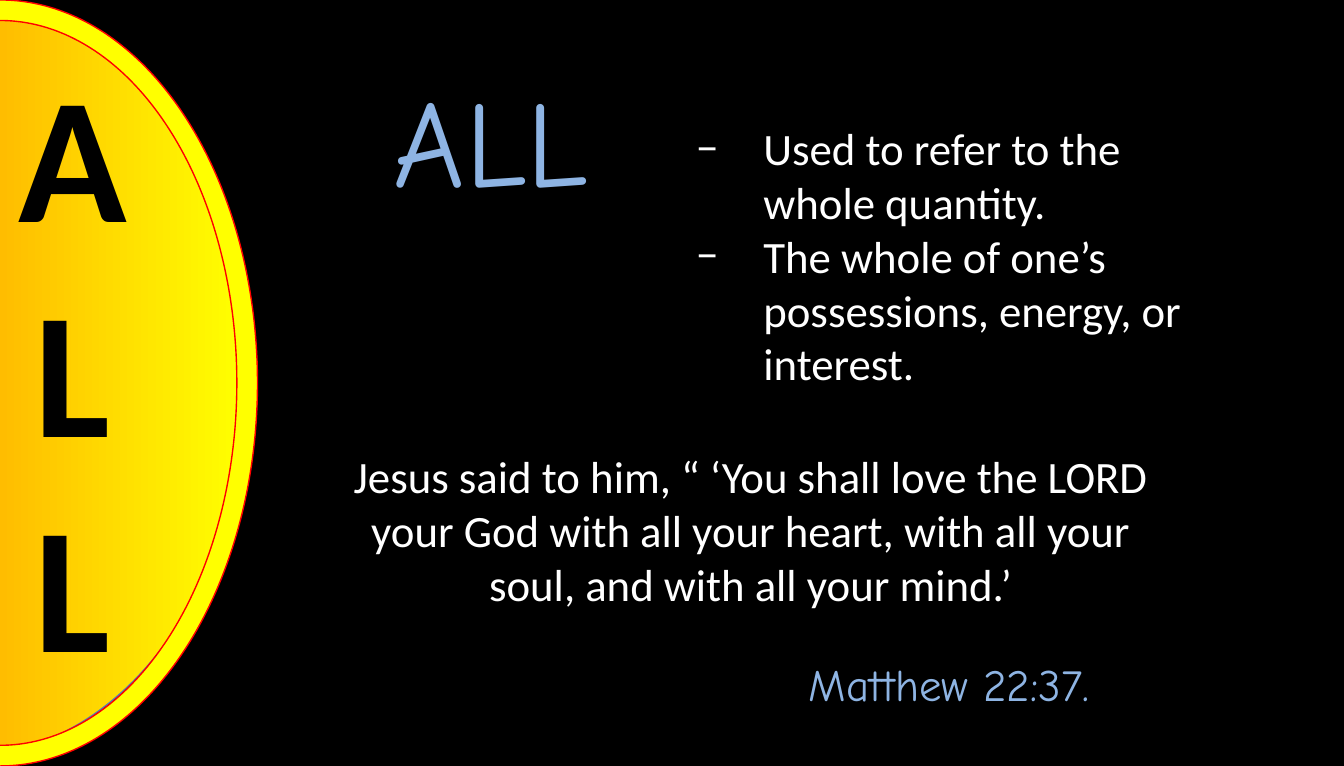
from lxml import etree
from pptx import Presentation
from pptx.dml.color import RGBColor
from pptx.enum.shapes import MSO_SHAPE
from pptx.enum.text import MSO_ANCHOR, MSO_AUTO_SIZE, PP_ALIGN
from pptx.oxml.ns import qn
from pptx.util import Inches, Pt

LEFT, MID = PP_ALIGN.LEFT, PP_ALIGN.CENTER
TOP, FIXED = MSO_ANCHOR.TOP, MSO_AUTO_SIZE.NONE
CHORD, ARC = MSO_SHAPE.CHORD, MSO_SHAPE.BLOCK_ARC

WIDE, HIGH = Inches(10), Inches(5.7)
BLACK, WHITE, BLUE = "000000", "FFFFFF", "8EB4E3"
YELLOW, ORANGE, RED, EDGE = "FFFF00", "FF6600", "FF0000", "4B7EBC"
PLAIN, HAND = "Calibri", "Comic Neue"

WORD = "ALL"
SENSES = [
    "Used to refer to the whole quantity.",
    "The whole of one’s possessions, energy, or interest.",
]
VERSE = (
    "Jesus said to him, “ ‘You shall love the LORD your God "
    "with all your heart, with all your soul, and with all your mind.’"
)
SOURCE = "Matthew 22:37."

AREAS = {
    "disc": (-23, 0, 41.3, 98.6),
    "rim": (-28.5, 16.4, 57, 67.2),
    "side": (-2.5, 4.74, 15.8, 86.84),
    "senses": (50.8, 14.91, 38.3, 37.19),
    "word": (28.3, 7.54, 23.3, 21.23),
    "verse": (25, 57.72, 61.7, 22.98),
    "source": (59.2, 84.91, 34.2, 8.77),
}


def color(code):
    return RGBColor.from_string(code)


def area(name):
    x, y, w, h = AREAS[name]
    return [int(part * full / 100) for part, full in
            ((x, WIDE), (y, HIGH), (w, WIDE), (h, HIGH))]


def place(shape, name):
    shape.left, shape.top, shape.width, shape.height = area(name)
    return shape


def write(shape, lines, size, font, tint, align=LEFT, bold=False):
    frame = shape.text_frame
    frame.text = "\n".join(lines)
    frame.word_wrap = True
    frame.auto_size = FIXED
    frame.vertical_anchor = TOP
    for para in frame.paragraphs:
        para.alignment = align
        para.space_before = Pt(0)
        for run in para.runs:
            run.font.size = Pt(size)
            run.font.name = font
            run.font.bold = bold
            run.font.color.rgb = color(tint)


def dash(para):
    props = para._p.get_or_add_pPr()
    props.set("marL", str(Inches(0.5)))
    props.set("indent", str(-Inches(0.5)))
    etree.SubElement(props, qn("a:buFont")).set("typeface", PLAIN)
    etree.SubElement(props, qn("a:buChar")).set("char", "−")


def curve(slide, kind, name, turns, edge):
    shape = slide.shapes.add_shape(kind, *area(name))
    shape.shadow.inherit = False
    for spot, turn in enumerate(turns):
        shape.adjustments[spot] = turn
    shape.line.color.rgb = color(edge)
    shape.line.width = Pt(0.75)
    return shape


def main():
    deck = Presentation()
    deck.slide_width, deck.slide_height = WIDE, HIGH
    slide = deck.slides.add_slide(deck.slide_layouts[1])
    back = slide.background.fill
    back.solid()
    back.fore_color.rgb = color(BLACK)

    disc = curve(slide, CHORD, "disc", (54.12, 162), EDGE)
    disc._element.spPr.xfrm.set("flipH", "1")
    disc.fill.gradient()
    disc.fill.gradient_angle = 0
    stops = zip(disc.fill.gradient_stops, (0.01, 0.99), (YELLOW, ORANGE))
    for stop, spot, tint in stops:
        stop.position = spot
        stop.color.rgb = color(tint)

    side = slide.shapes.add_textbox(*area("side"))
    write(side, WORD, 96, PLAIN, BLACK, MID, True)

    rim = curve(slide, ARC, "rim", (107.89, 0.11, 0.04), RED)
    rim.rotation = 90
    rim.fill.solid()
    rim.fill.fore_color.rgb = color(YELLOW)

    title, body = slide.placeholders
    write(place(body, "senses"), SENSES, 24, PLAIN, WHITE)
    for para in body.text_frame.paragraphs:
        dash(para)
    write(place(title, "word"), [WORD], 66, HAND, BLUE)

    verse = slide.shapes.add_textbox(*area("verse"))
    write(verse, [VERSE], 24, PLAIN, WHITE, MID)
    source = slide.shapes.add_textbox(*area("source"))
    write(source, [SOURCE], 24, HAND, BLUE)
    deck.save("out.pptx")


if __name__ == "__main__":
    main()
